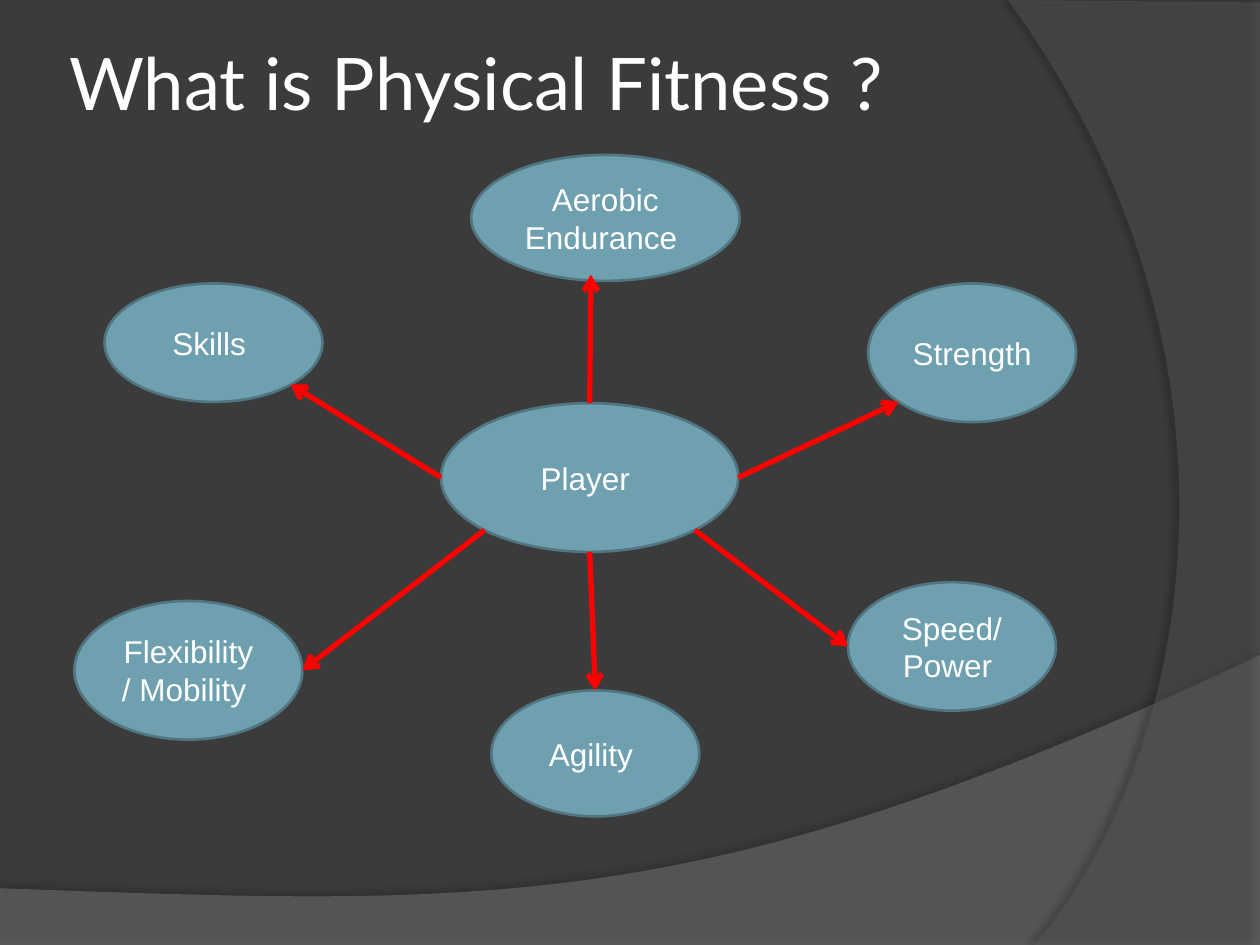
from math import sqrt

from lxml.etree import SubElement
from pptx import Presentation
from pptx.dml.color import RGBColor
from pptx.enum.shapes import MSO_CONNECTOR, MSO_SHAPE
from pptx.enum.text import MSO_ANCHOR, PP_ALIGN
from pptx.oxml.ns import qn
from pptx.util import Inches, Pt

# Content
TITLE = "What is Physical Fitness ?"
OVALS = {  # name: (text, left, top, width, height)
    "player": ("Player ", 3.5, 3.2, 2.36, 1.18),
    "skills": ("Skills ", 0.83, 2.25, 1.73, 0.94),
    "aerobic": ("Aerobic Endurance ", 3.74, 1.23, 2.13, 1),
    "strength": ("Strength ", 6.89, 2.25, 1.65, 1.1),
    "flexibility": ("Flexibility/ Mobility  ", 0.59, 4.77, 1.81, 1.1),
    "agility": ("Agility ", 3.9, 5.48, 1.65, 1),
    "speed": ("Speed/ Power ", 6.73, 4.62, 1.65, 1.02),
}
ARROWS = [  # side of the player oval, target oval, side of the target
    ("right", "strength", "bottom left"),
    ("bottom", "agility", "top"),
    ("bottom left", "flexibility", "right"),
    ("bottom right", "speed", "left"),
    ("left", "skills", "bottom right"),
]
AEROBIC_TIP = (4.69, 2.18)

# Background swooshes: corner points around one Bezier curve
SWOOSHES = [
    dict(before=[(0, 7.5), (10, 7.5)],
         curve=[(10, 5.2), (5.59, 7.29), (3.91, 7.19), (0, 7.05)], after=[],
         fill="7F7F7F", opacity=45, shadow=(35, 4, 3.5, 270)),
    dict(before=[(10, 0.02), (10, 7.5)],
         curve=[(8.21, 7.5), (9.35, 6.19), (10.18, 3), (8, 0)], after=[],
         fill="5E5E5E", opacity=40, shadow=(45, 4, 4, 180)),
]
CURVE_STEPS = 60


def color(hex_text):
    return RGBColor.from_string(hex_text)


def bezier(points, t):
    weights = ((1 - t) ** 3, 3 * t * (1 - t) ** 2, 3 * t * t * (1 - t), t ** 3)
    return tuple(sum(w * p[axis] for w, p in zip(weights, points)) for axis in (0, 1))


def add_alpha(parent, percent):
    SubElement(parent, qn("a:alpha"), val=str(percent * 1000))


def add_swoosh(shapes, before, curve, after, fill, opacity, shadow):
    points = before + [bezier(curve, i / CURVE_STEPS) for i in range(CURVE_STEPS + 1)] + after
    points = [(Inches(x), Inches(y)) for x, y in points]
    builder = shapes.build_freeform(*points[0])
    builder.add_line_segments(points[1:])
    sp = builder.convert_to_shape()
    sp.fill.solid()
    sp.fill.fore_color.rgb = color(fill)
    sp.line.fill.background()
    sp_pr = sp.element.spPr
    add_alpha(sp_pr.find(qn("a:solidFill"))[0], opacity)
    # Soft black shadow
    strength, blur, distance, angle = shadow
    sp.shadow.inherit = False
    outer = SubElement(sp_pr.find(qn("a:effectLst")), qn("a:outerShdw"),
                       blurRad=str(Pt(blur)), dist=str(Pt(distance)),
                       dir=str(angle * 60000), algn="ctr", rotWithShape="0")
    add_alpha(SubElement(outer, qn("a:srgbClr"), val="000000"), strength)


def add_oval(shapes, text, *box):
    sp = shapes.add_shape(MSO_SHAPE.OVAL, *map(Inches, box))
    sp.shadow.inherit = False
    sp.fill.solid()
    sp.fill.fore_color.rgb = color("6EA0B0")
    sp.line.color.rgb = color("517682")
    sp.line.width = Pt(1.5)
    tf = sp.text_frame
    tf.word_wrap = True
    tf.vertical_anchor = MSO_ANCHOR.MIDDLE
    p = tf.paragraphs[0]
    p.text = text
    p.alignment = PP_ALIGN.CENTER
    set_font(p.font, "Arial", 18)


def set_font(font, name, size):
    font.name = name
    font.size = Pt(size)
    font.color.rgb = color("FFFFFF")


def rim_point(name, side):
    """Point on an oval's rim, at a side or halfway between two sides."""
    _, left, top, width, height = OVALS[name]
    dx = ("right" in side) - ("left" in side)
    dy = ("bottom" in side) - ("top" in side)
    reach = 0.5 / sqrt(dx * dx + dy * dy)
    return left + width * (0.5 + reach * dx), top + height * (0.5 + reach * dy)


def add_arrow(shapes, start, end):
    line = shapes.add_connector(MSO_CONNECTOR.STRAIGHT, *map(Inches, start + end))
    line.line.color.rgb = color("FF0000")
    line.line.width = Pt(3)
    SubElement(line.line._get_or_add_ln(), qn("a:tailEnd"), type="arrow")
    SubElement(line.element.spPr, qn("a:effectLst"))


prs = Presentation()
prs.slide_width, prs.slide_height = Inches(10), Inches(7.5)
s = prs.slides.add_slide(prs.slide_layouts[5])
s.background.fill.solid()
s.background.fill.fore_color.rgb = color("3B3B3B")

for swoosh in SWOOSHES:
    add_swoosh(s.shapes, **swoosh)

# Title, in front of the swooshes
title = s.shapes.title
s.shapes.element.append(title.element)
title.left, title.top, title.width, title.height = map(Inches, (0.5, 0.3, 8.17, 0.69))
tf = title.text_frame
tf.margin_left = tf.margin_right = tf.margin_top = tf.margin_bottom = Inches(0.05)
tf.vertical_anchor = MSO_ANCHOR.MIDDLE
p = tf.paragraphs[0]
p.text = TITLE
p.alignment = PP_ALIGN.LEFT
set_font(p.font, "Lato", 41.4)

# Ovals and the arrows from the player
for oval in OVALS.values():
    add_oval(s.shapes, *oval)
add_arrow(s.shapes, rim_point("player", "top"), AEROBIC_TIP)
for player_side, target, target_side in ARROWS:
    add_arrow(s.shapes, rim_point("player", player_side), rim_point(target, target_side))

prs.save("out.pptx")
